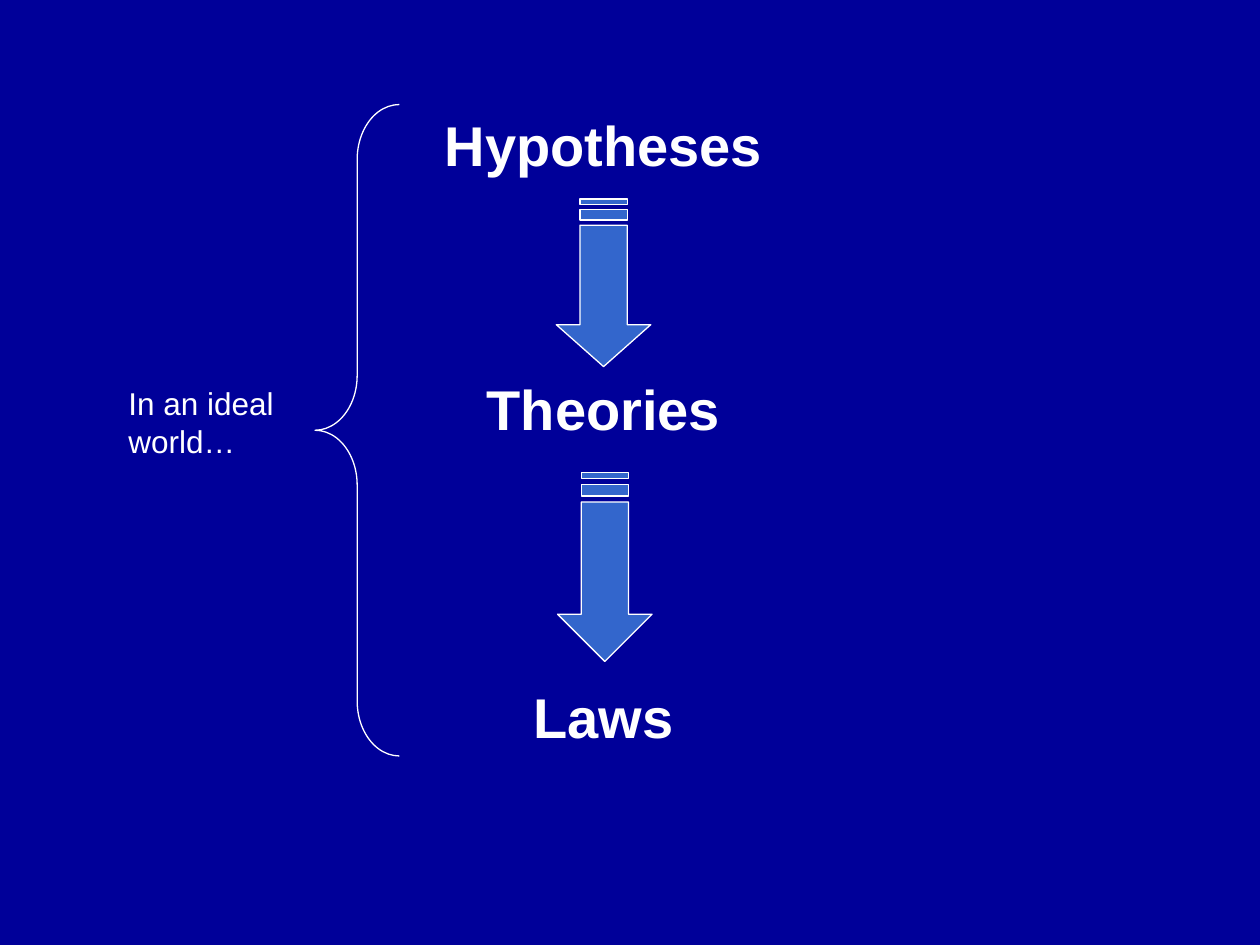
from dataclasses import dataclass

import pptx
import pptx.dml.color
import pptx.enum.shapes
import pptx.enum.text
import pptx.util
from pptx.util import Inches

BACKGROUND = "000099"
WHITE = "FFFFFF"
ARROW_BLUE = "3366CC"
ARROW_THICKNESS = 0.75
CENTER = pptx.enum.text.PP_ALIGN.CENTER
LEFT = pptx.enum.text.PP_ALIGN.LEFT


@dataclass
class Label:
    text: str
    left: float
    top: float
    width: float
    height: float
    size: int = 32
    bold: bool = True
    alignment: pptx.enum.text.PP_ALIGN = CENTER


@dataclass
class StripedArrow:
    center_x: float
    top: float
    length: float


LABELS = [
    Label("Hypotheses", 3.25, 0.83, 3.08, 0.63),
    Label("Theories", 3.25, 2.92, 3.08, 0.63),
    Label("Laws", 3.25, 5.37, 3.08, 0.63),
    Label("In an ideal world…", 0.92, 3, 1.75, 0.7, 18, False, LEFT),
]
ARROWS = [StripedArrow(4.79, 1.58, 1.33), StripedArrow(4.8, 3.75, 1.5)]


def color(value: str) -> pptx.dml.color.RGBColor:
    return pptx.dml.color.RGBColor.from_string(value)


def outline(shape) -> None:
    shape.shadow.inherit = False
    shape.line.color.rgb = color(WHITE)
    shape.line.width = pptx.util.Pt(0.75)


def draw_label(slide, label: Label) -> None:
    shape = slide.shapes.add_textbox(
        Inches(label.left), Inches(label.top), Inches(label.width), Inches(label.height)
    )
    text_frame = shape.text_frame
    text_frame.word_wrap = True
    text_frame.auto_size = pptx.enum.text.MSO_AUTO_SIZE.SHAPE_TO_FIT_TEXT
    text_frame.text = label.text
    paragraph = text_frame.paragraphs[0]
    paragraph.alignment = label.alignment
    font = paragraph.runs[0].font
    font.name = "Arial"
    font.size = pptx.util.Pt(label.size)
    font.bold = label.bold
    font.color.rgb = color(WHITE)


def draw_arrow(slide, arrow: StripedArrow) -> None:
    left = arrow.center_x - arrow.length / 2
    top = arrow.top + (arrow.length - ARROW_THICKNESS) / 2
    head = 3 / 4
    shaft_start = 5 / 32
    contours = [
        [(head, 0), (head, 1 / 4), (shaft_start, 1 / 4), (shaft_start, 3 / 4),
         (head, 3 / 4), (head, 1), (1, 1 / 2)],
    ]
    for start, end in [(1 / 16, 1 / 8), (0, 1 / 32)]:
        contours.append([(start, 1 / 4), (start, 3 / 4), (end, 3 / 4), (end, 1 / 4)])

    builder = None
    for contour in contours:
        points = [
            (Inches(left + along * arrow.length), Inches(top + across * ARROW_THICKNESS))
            for along, across in contour
        ]
        if builder is None:
            builder = slide.shapes.build_freeform(*points[0])
        else:
            builder.move_to(*points[0])
        builder.add_line_segments(points[1:], close=True)
    shape = builder.convert_to_shape()
    shape.rotation = 90
    shape.fill.solid()
    shape.fill.fore_color.rgb = color(ARROW_BLUE)
    outline(shape)


def draw_brace(slide) -> None:
    brace = slide.shapes.add_shape(
        pptx.enum.shapes.MSO_SHAPE.LEFT_BRACE,
        Inches(2.5), Inches(0.83), Inches(0.67), Inches(5.17),
    )
    brace.adjustments[0] = 0.65
    brace.adjustments[1] = 0.5
    brace.fill.background()
    outline(brace)


def main() -> None:
    presentation = pptx.Presentation()
    presentation.slide_width = Inches(10)
    presentation.slide_height = Inches(7.5)
    slide = presentation.slides.add_slide(presentation.slide_layouts[6])
    slide.background.fill.solid()
    slide.background.fill.fore_color.rgb = color(BACKGROUND)
    for arrow in ARROWS:
        draw_arrow(slide, arrow)
    draw_brace(slide)
    for label in LABELS:
        draw_label(slide, label)
    presentation.save("out.pptx")


if __name__ == "__main__":
    main()
